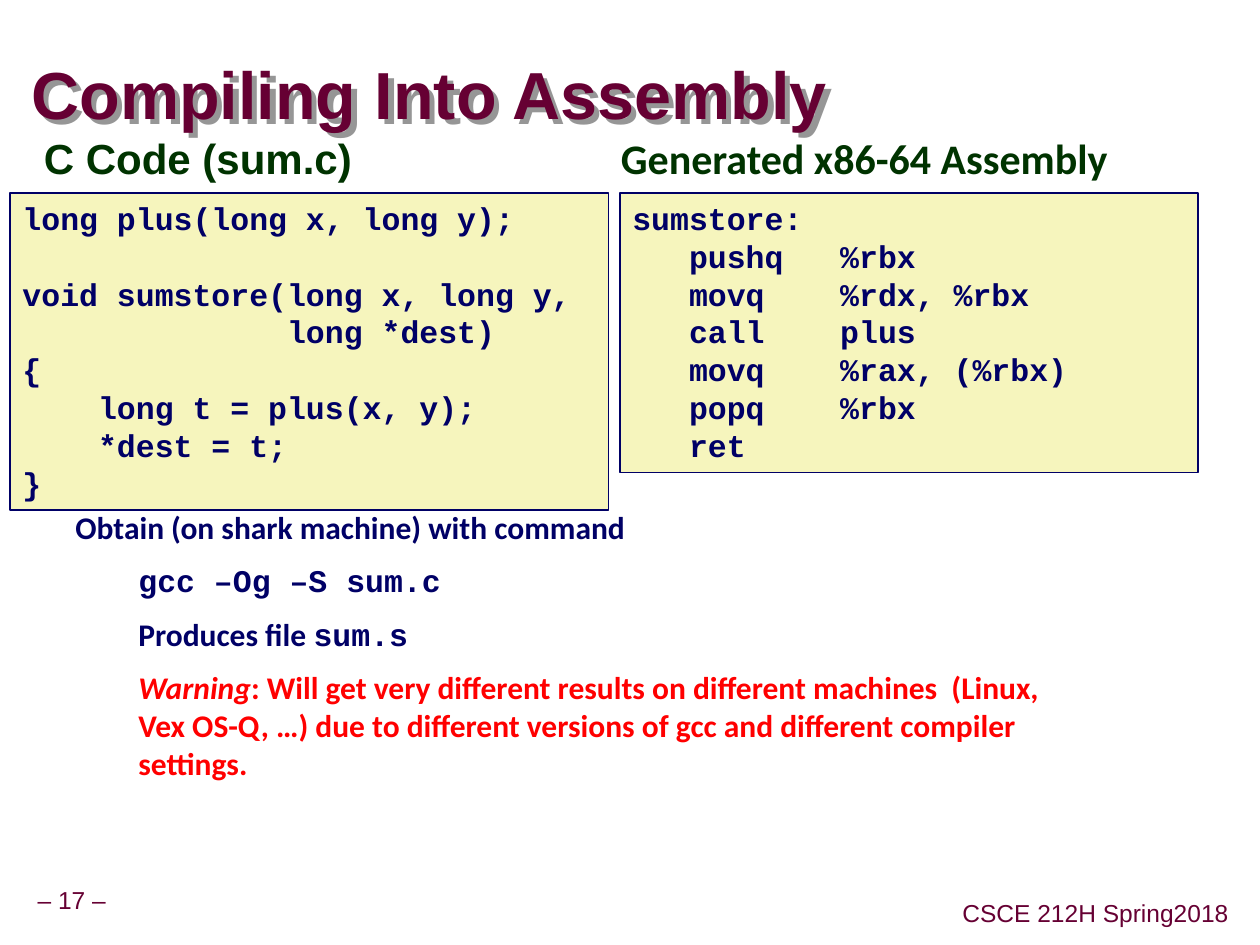
from dataclasses import dataclass
from lxml import etree
from pptx import Presentation
from pptx.dml.color import RGBColor
from pptx.enum import shapes, text
from pptx.oxml import ns
from pptx.util import Inches, Pt


@dataclass
class Theme:
    wine: str = "660033"
    green: str = "003300"
    navy: str = "000066"
    red: str = "FF0000"
    cream: str = "F6F5BD"
    gray: str = "969696"
    sans: str = "Arial"
    body: str = "Calibri"
    mono: str = "Courier New"
    title: int = 38
    head: int = 24
    main: int = 18
    foot: int = 14


theme = Theme()


def style(font, face, size, color, bold=True):
    font.name, font.size, font.bold = face, Pt(size), bold
    font.color.rgb = RGBColor.from_string(color)


def label(words, box, face, size, color, bold=True):
    frame = slide.shapes.add_textbox(*map(Inches, box)).text_frame
    frame.word_wrap = True
    para = frame.paragraphs[0]
    para.text = words
    style(para.font, face, size, color, bold)
    return frame


deck = Presentation()
deck.slide_width, deck.slide_height = Inches(10), Inches(7.5)
slide = deck.slides.add_slide(deck.slide_layouts[5])

# Footer
for words, box in [
    ("– 17 –", (0.24, 7, 0.66, 0.31)),
    ("CSCE 212H Spring2018", (7.58, 7.1, 2.23, 0.31)),
]:
    frame = label(words, box, theme.sans, theme.foot, theme.wine, False)
    frame.word_wrap = False
    frame.margin_left = frame.margin_right = Inches(0.05)
    frame.vertical_anchor = text.MSO_ANCHOR.MIDDLE
    para = frame.paragraphs[0]
    para.alignment, para.line_spacing = text.PP_ALIGN.CENTER, 0.9

# Title with its drop shadow
title = slide.shapes.title
title.left, title.top = Inches(0.25), Inches(0.48)
title.width, title.height = Inches(7.49), Inches(0.61)
frame = title.text_frame
frame.text = "Compiling Into Assembly"
frame.margin_left = frame.margin_right = frame.margin_top = frame.margin_bottom = 0
frame.vertical_anchor = text.MSO_ANCHOR.MIDDLE
frame.auto_size = text.MSO_AUTO_SIZE.NONE
para = frame.paragraphs[0]
para.alignment, para.line_spacing = text.PP_ALIGN.LEFT, 0.87
style(para.font, theme.sans, theme.title, theme.wine)
title.fill.background()
effect = etree.SubElement(title._element.spPr, ns.qn("a:effectLst"))
shade = etree.SubElement(effect, ns.qn("a:outerShdw"), dist="53882", dir="2700000")
etree.SubElement(shade, ns.qn("a:srgbClr"), val=theme.gray)

# Column heads
label("C Code (sum.c)", (0.25, 1.03, 2.67, 0.4), theme.sans, theme.head,
      theme.green).paragraphs[0].line_spacing = 0.95
label("Generated x86-64 Assembly", (4.83, 1, 4.5, 0.45), theme.body,
      theme.head, theme.green)

# Code panels
source = """long plus(long x, long y);

void sumstore(long x, long y,
              long *dest)
{
    long t = plus(x, y);
    *dest = t;
}"""
target = """sumstore:
   pushq   %rbx
   movq    %rdx, %rbx
   call    plus
   movq    %rax, (%rbx)
   popq    %rbx
   ret"""
for code, box in [
    (source, (0.08, 1.53, 4.75, 2.52)),
    (target, (4.92, 1.53, 4.59, 2.22)),
]:
    panel = slide.shapes.add_shape(shapes.MSO_SHAPE.RECTANGLE, *map(Inches, box))
    panel.shadow.inherit = False
    panel.fill.solid()
    panel.fill.fore_color.rgb = RGBColor.from_string(theme.cream)
    panel.line.color.rgb = RGBColor.from_string(theme.navy)
    panel.line.width = Pt(1)
    frame = panel.text_frame
    frame.vertical_anchor = text.MSO_ANCHOR.TOP
    frame.text = code
    for para in frame.paragraphs:
        para.alignment = text.PP_ALIGN.LEFT
        style(para.font, theme.mono, theme.main, theme.navy)

# Notes on the command: indent, colour, then runs of (words, face, italic)
notes = [
    (0, theme.navy, [("Obtain (on shark machine) with command", theme.body, False)]),
    (0.5, theme.navy, [("gcc –Og –S sum.c", theme.mono, False)]),
    (0.5, theme.navy, [("Produces file ", theme.body, False),
                       ("sum.s", theme.mono, False)]),
    (0.5, theme.red, [
        ("Warning", theme.body, True),
        (": Will get very different results on different machines  (Linux, "
         "Vex OS-Q, …) due to different versions of gcc and different compiler "
         "settings.", theme.body, False)]),
]
frame = slide.shapes.add_textbox(
    Inches(0.5), Inches(3.98), Inches(8.17), Inches(2.52)).text_frame
frame.word_wrap = True
for i, (indent, color, runs) in enumerate(notes):
    para = frame.add_paragraph() if i else frame.paragraphs[0]
    para.space_before = Pt(9 if i else 0)
    para._p.get_or_add_pPr().set("marL", str(Inches(indent)))
    style(para.font, runs[0][1], theme.main, color)
    for words, face, slant in runs:
        run = para.add_run()
        run.text = words
        run.font.name, run.font.italic = face, slant

deck.save("out.pptx")
